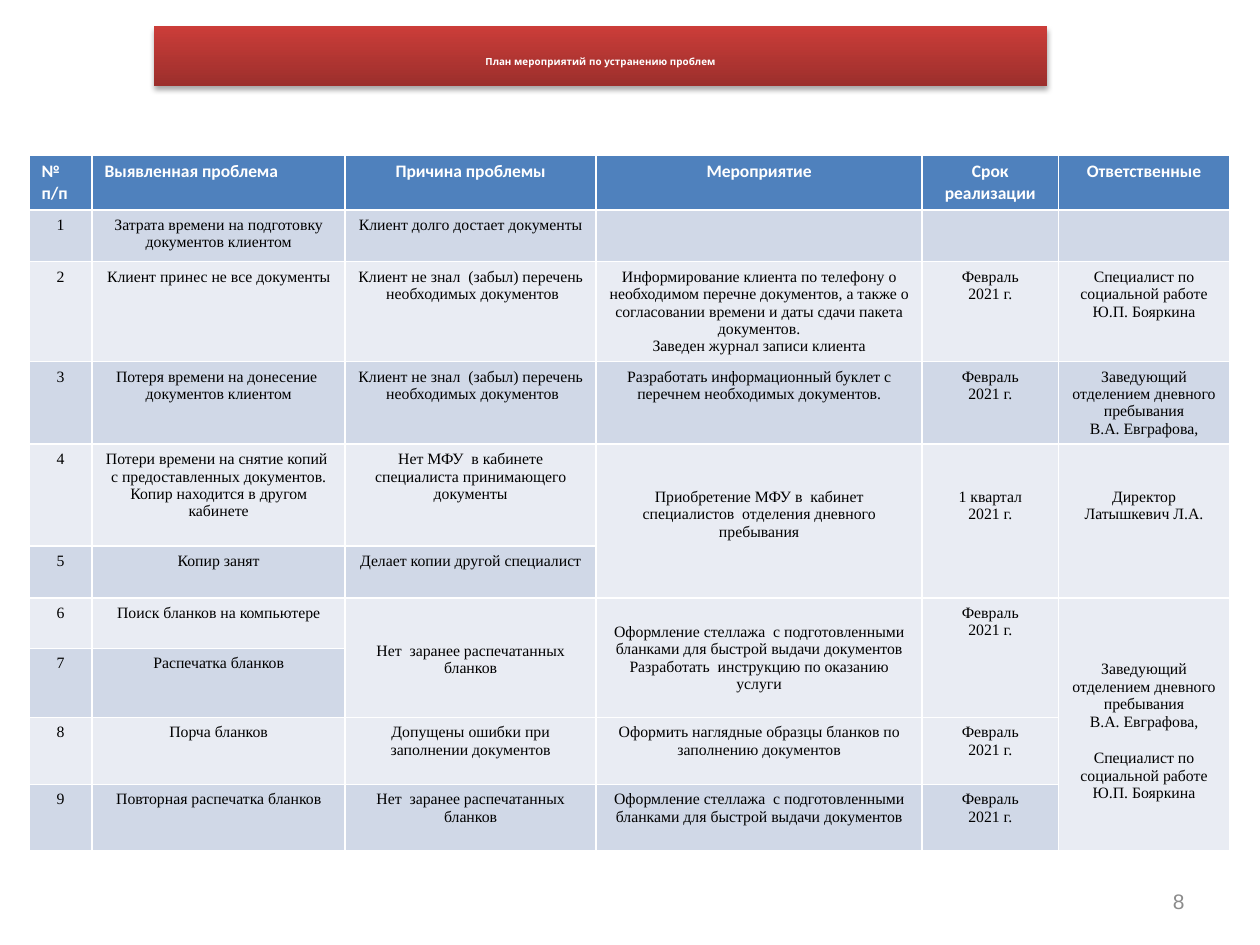
"""Builds the slide with the plan of measures for removing problems."""
from lxml import etree
from pptx import Presentation
from pptx.dml.color import RGBColor
from pptx.enum.text import MSO_ANCHOR, MSO_AUTO_SIZE, PP_ALIGN
from pptx.util import Inches, Pt

LEFT, CENTER, RIGHT = PP_ALIGN.LEFT, PP_ALIGN.CENTER, PP_ALIGN.RIGHT
MIDDLE = MSO_ANCHOR.MIDDLE
NO_AUTOFIT = MSO_AUTO_SIZE.NONE

THEME = {
    "header_fill": "4F81BD",
    "bands": ("D0D8E7", "E9ECF3"),
    "title_gradient": ("9C2F2C", "CB3D39"),
    "title": {"name": "League Spartan", "size": 5.6, "color": "FFFFFF", "bold": True},
    "header": {"name": "Calibri", "size": 10, "color": "FFFFFF", "bold": True},
    "body": {"name": "Times New Roman", "size": 9, "color": "000000", "bold": False},
    "number": {"name": "Arial", "size": 12, "color": "8B8B8B", "bold": False},
}

TITLE = "План мероприятий по устранению проблем"
PAGE = "8"
HEADINGS = ["№\nп/п", "Выявленная проблема", "Причина проблемы", "Мероприятие",
            "Срок реализации", "Ответственные"]
FEBRUARY = "Февраль\n2021 г."
HEAD = "Заведующий отделением дневного пребывания\nВ.А. Евграфова,"
SPECIALIST = "Специалист по социальной работе\nЮ.П. Бояркина"
UNKNOWN_LIST = "Клиент не знал  (забыл) перечень  необходимых документов"
NO_FORMS = "Нет  заранее распечатанных бланков"
STAND = "Оформление стеллажа  с подготовленными бланками для быстрой выдачи документов"
PLAN = [
    ("Затрата времени на подготовку документов клиентом",
     "Клиент долго достает документы", "", "", ""),
    ("Клиент принес не все документы", UNKNOWN_LIST,
     "Информирование клиента по телефону о необходимом перечне документов, а также "
     "о согласовании времени и даты сдачи пакета документов.\nЗаведен журнал записи клиента",
     FEBRUARY, SPECIALIST),
    ("Потеря времени на донесение  документов клиентом", UNKNOWN_LIST,
     "Разработать информационный буклет с перечнем необходимых документов.", FEBRUARY, HEAD),
    ("Потери времени на снятие копий  с предоставленных документов. "
     "Копир находится в другом кабинете",
     "Нет МФУ  в кабинете специалиста принимающего документы",
     "Приобретение МФУ в  кабинет специалистов  отделения дневного пребывания",
     "1 квартал\n2021 г.", "Директор\nЛатышкевич Л.А."),
    ("Копир занят", "Делает копии другой специалист", "", "", ""),
    ("Поиск бланков на компьютере", NO_FORMS,
     STAND + "\nРазработать  инструкцию по оказанию услуги", FEBRUARY,
     HEAD + "\n" + SPECIALIST),
    ("Распечатка бланков", "", "", "", ""),
    ("Порча бланков", "Допущены ошибки при заполнении документов",
     "Оформить наглядные образцы бланков по заполнению документов", FEBRUARY, ""),
    ("Повторная распечатка бланков", NO_FORMS, STAND, FEBRUARY, ""),
]
ROWS = [HEADINGS] + [(str(number), *row) for number, row in enumerate(PLAN, 1)]
COLUMN_WIDTHS = [0.5, 2.01, 1.99, 2.59, 1.08, 1.36]
ROW_HEIGHTS = [0.43, 0.41, 0.79, 0.65, 0.81, 0.41, 0.4, 0.55, 0.53, 0.53]
MERGES = [
    {"row": 4, "column": 3, "rows": 2, "lines_down": 2},
    {"row": 4, "column": 4, "rows": 2, "lines_down": 2},
    {"row": 4, "column": 5, "rows": 2, "lines_down": 2},
    {"row": 6, "column": 2, "rows": 2, "lines_down": 2},
    {"row": 6, "column": 3, "rows": 2, "lines_down": 1},
    {"row": 6, "column": 4, "rows": 2, "lines_down": 0},
    {"row": 6, "column": 5, "rows": 4, "lines_down": 3},
]
PADDING, LINE_HEIGHT = 0.05, 0.15

SHADOW = (
    '<a:effectLst xmlns:a="http://schemas.openxmlformats.org/drawingml/2006/main">'
    '<a:outerShdw blurRad="39370" dist="22860" dir="5400000" rotWithShape="0">'
    '<a:srgbClr val="000000"><a:alpha val="35000"/></a:srgbClr>'
    '</a:outerShdw></a:effectLst>'
)


def write(frame, text, style, alignment):
    """Fills a text frame, one paragraph per line of text."""
    frame.text = text
    for paragraph in frame.paragraphs:
        paragraph.alignment = alignment
        font = paragraph.font
        font.name, font.size, font.bold = style["name"], Pt(style["size"]), style["bold"]
        font.color.rgb = RGBColor.from_string(style["color"])


def place(shape, left, top, width, height):
    """Sets the position and size of a shape in inches."""
    shape.left, shape.top = Inches(left), Inches(top)
    shape.width, shape.height = Inches(width), Inches(height)


def add_title(slide):
    """Formats the title placeholder as a red banner."""
    banner = slide.shapes.title
    place(banner, 1.22, 0.21, 7.09, 0.47)
    banner.fill.gradient()
    banner.fill.gradient_angle = 90
    for stop, color in zip(banner.fill.gradient_stops, THEME["title_gradient"]):
        stop.color.rgb = RGBColor.from_string(color)
    banner._element.spPr.append(etree.fromstring(SHADOW))
    frame = banner.text_frame
    frame.auto_size, frame.vertical_anchor = NO_AUTOFIT, MIDDLE
    frame.margin_top = Inches(0.14)
    write(frame, TITLE, THEME["title"], CENTER)


def add_plan(slide):
    """Adds the table of problems, causes and measures."""
    table = slide.shapes.add_table(
        len(ROWS), len(HEADINGS), Inches(0.23), Inches(1.23),
        Inches(sum(COLUMN_WIDTHS)), Inches(sum(ROW_HEIGHTS))).table
    for column, width in zip(table.columns, COLUMN_WIDTHS):
        column.width = Inches(width)
    for row, height in zip(table.rows, ROW_HEIGHTS):
        row.height = Inches(height)
    for r, row in enumerate(ROWS):
        style = THEME["body"] if r else THEME["header"]
        color = THEME["bands"][(r - 1) % 2] if r else THEME["header_fill"]
        for c, text in enumerate(row):
            cell = table.cell(r, c)
            cell.fill.solid()
            cell.fill.fore_color.rgb = RGBColor.from_string(color)
            write(cell.text_frame, text, style, LEFT if r == 0 and c < 2 else CENTER)
    for merge in MERGES:
        cell = table.cell(merge["row"], merge["column"])
        cell.merge(table.cell(merge["row"] + merge["rows"] - 1, merge["column"]))
        cell.margin_top = Inches(PADDING + merge["lines_down"] * LINE_HEIGHT)
    shared_duty = table.cell(6, 5).text_frame.paragraphs
    shared_duty[2].space_before = Pt(THEME["body"]["size"] * 1.2)


def add_page_number(slide):
    """Adds the page number at the lower right."""
    frame = slide.shapes.add_textbox(
        Inches(7.17), Inches(6.95), Inches(2.33), Inches(0.4)).text_frame
    frame.word_wrap, frame.vertical_anchor = True, MIDDLE
    write(frame, PAGE, THEME["number"], RIGHT)


def main():
    """Builds and saves the presentation."""
    presentation = Presentation()
    presentation.slide_width, presentation.slide_height = Inches(10), Inches(7.5)
    slide = presentation.slides.add_slide(presentation.slide_layouts[5])
    add_title(slide)
    add_plan(slide)
    add_page_number(slide)
    presentation.save("out.pptx")


if __name__ == "__main__":
    main()
